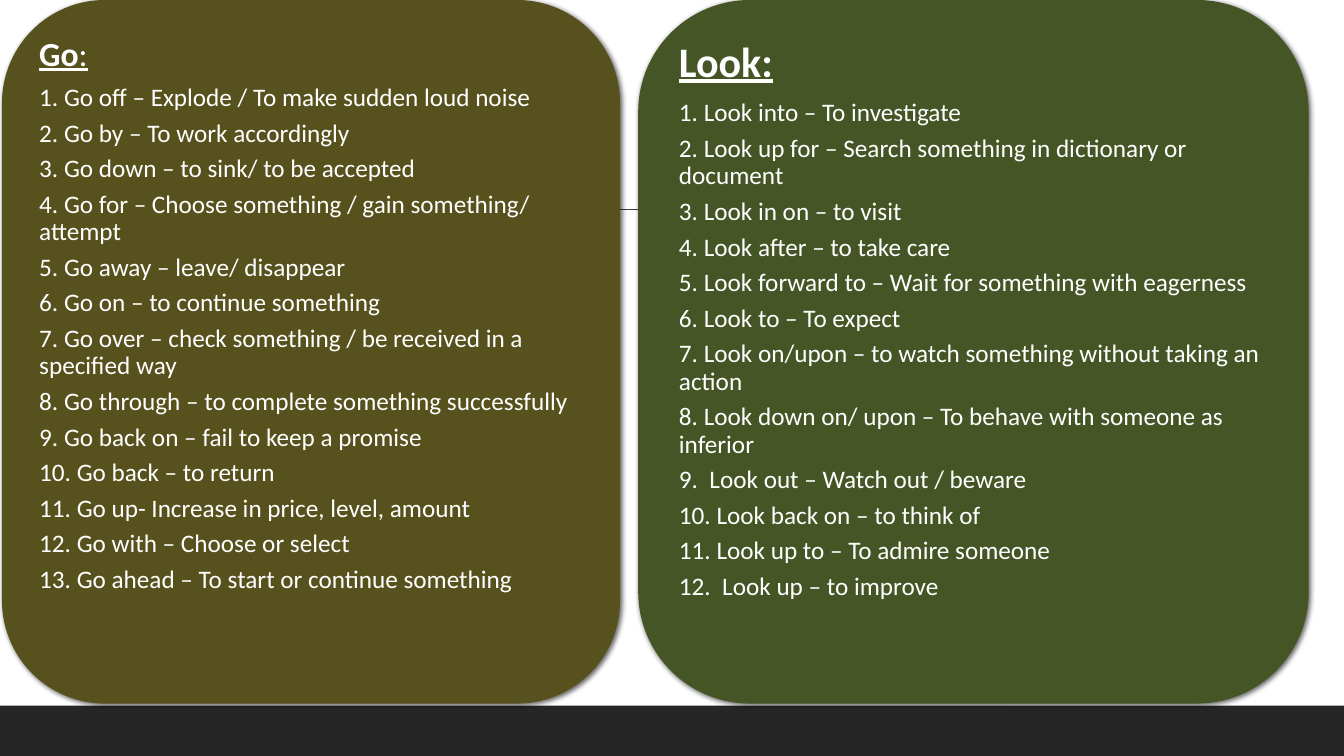
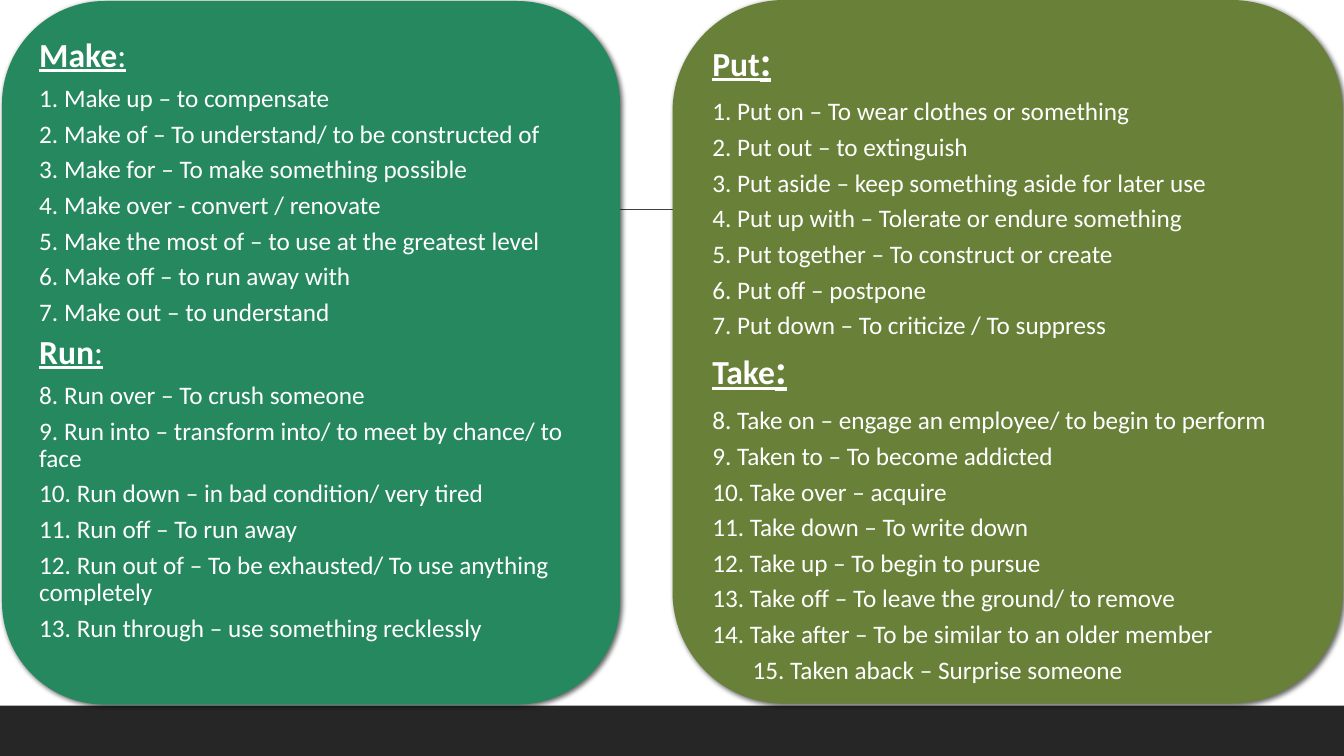
from lxml import etree
from pptx import Presentation
from pptx.dml.color import RGBColor
from pptx.enum.shapes import MSO_CONNECTOR, MSO_SHAPE
from pptx.enum.text import MSO_ANCHOR, PP_ALIGN
from pptx.oxml import parse_xml
from pptx.oxml.ns import nsdecls, qn
from pptx.util import Inches, Pt

FONT = "Calibri"
TEXT_COLOUR = "FFFFFF"
BAND_COLOUR = "262626"
RULE_COLOUR = "404040"
BODY_SIZE = 18
PANEL_HEIGHT = 6.98
LEFT_WIDTH, RIGHT_WIDTH = 6.13, 6.65
SHADOW = (
    f'<a:outerShdw {nsdecls("a")} blurRad="38100" dist="25400" dir="2700000" '
    'algn="tl" rotWithShape="0"><a:srgbClr val="000000">'
    '<a:alpha val="60000"/></a:srgbClr></a:outerShdw>'
)

SLIDES = [
    [
        dict(
            left=0.02, top=0, width=LEFT_WIDTH, colour="57521D", inset=0.07,
            heading_size=24, colon_size=24, colon_bold=False,
            lines=[
                "Go:",
                "1. Go off – Explode / To make sudden loud noise",
                "2. Go by – To work accordingly",
                "3. Go down – to sink/ to be accepted",
                "4. Go for – Choose something / gain something/ attempt",
                "5. Go away – leave/ disappear",
                "6. Go on – to continue something",
                "7. Go over – check something / be received in a specified way",
                "8. Go through – to complete something successfully",
                "9. Go back on – fail to keep a promise",
                "10. Go back – to return",
                "11. Go up- Increase in price, level, amount",
                "12. Go with – Choose or select",
                "13. Go ahead – To start or continue something",
            ],
        ),
        dict(
            left=6.33, top=0, width=RIGHT_WIDTH, colour="465525", inset=0.08,
            heading_size=30, colon_size=30, colon_bold=True,
            lines=[
                "Look:",
                "1. Look into – To investigate",
                "2. Look up for – Search something in dictionary or document",
                "3. Look in on – to visit",
                "4. Look after – to take care",
                "5. Look forward to – Wait for something with eagerness",
                "6. Look to – To expect",
                "7. Look on/upon – to watch something without taking an action",
                "8. Look down on/ upon – To behave with someone as inferior",
                "9.  Look out – Watch out / beware",
                "10. Look back on – to think of",
                "11. Look up to – To admire someone",
                "12.  Look up – to improve",
            ],
        ),
    ],
    [
        dict(
            left=0.02, top=0.01, width=LEFT_WIDTH, colour="26885E", inset=0.07,
            heading_size=24, colon_size=24, colon_bold=False,
            lines=[
                "Make:",
                "1. Make up – to compensate",
                "2. Make of – To understand/ to be constructed of",
                "3. Make for – To make something possible",
                "4. Make over - convert / renovate",
                "5. Make the most of – to use at the greatest level",
                "6. Make off – to run away with",
                "7. Make out – to understand",
                "Run:",
                "8. Run over – To crush someone",
                "9. Run into – transform into/ to meet by chance/ to face",
                "10. Run down – in bad condition/ very tired",
                "11. Run off – To run away",
                "12. Run out of – To be exhausted/ To use anything completely",
                "13. Run through – use something recklessly",
            ],
        ),
        dict(
            left=6.67, top=0, width=RIGHT_WIDTH, colour="698038", inset=0.07,
            heading_size=24, colon_size=30, colon_bold=True,
            lines=[
                "Put:",
                "1. Put on – To wear clothes or something",
                "2. Put out – to extinguish",
                "3. Put aside – keep something aside for later use",
                "4. Put up with – Tolerate or endure something",
                "5. Put together – To construct or create",
                "6. Put off – postpone",
                "7. Put down – To criticize / To suppress",
                "Take:",
                "8. Take on – engage an employee/ to begin to perform",
                "9. Taken to – To become addicted",
                "10. Take over – acquire",
                "11. Take down – To write down",
                "12. Take up – To begin to pursue",
                "13. Take off – To leave the ground/ to remove",
                "14. Take after – To be similar to an older member",
                "\t15. Taken aback – Surprise someone",
            ],
        ),
    ],
]


def rgb(colour):
    return RGBColor.from_string(colour)


def add_block(slide, kind, left, top, width, height, colour):
    shape = slide.shapes.add_shape(
        kind, Inches(left), Inches(top), Inches(width), Inches(height)
    )
    shape.shadow.inherit = False
    shape.fill.solid()
    shape.fill.fore_color.rgb = rgb(colour)
    shape.line.fill.background()
    return shape


presentation = Presentation()
presentation.slide_width = Inches(13.33)
presentation.slide_height = Inches(7.5)

for panels in SLIDES:
    slide = presentation.slides.add_slide(presentation.slide_layouts[6])
    add_block(slide, MSO_SHAPE.RECTANGLE, 0, 7, 13.33, 0.5, BAND_COLOUR)
    rule = slide.shapes.add_connector(
        MSO_CONNECTOR.STRAIGHT, Inches(1.31), Inches(2.08), Inches(12.21), Inches(2.08)
    )
    rule.line.color.rgb = rgb(RULE_COLOUR)
    rule.line.width = Pt(1)
    etree.SubElement(rule._element.spPr, qn("a:effectLst"))

    for panel in panels:
        shape = add_block(
            slide, MSO_SHAPE.FLOWCHART_ALTERNATE_PROCESS,
            panel["left"], panel["top"], panel["width"], PANEL_HEIGHT, panel["colour"],
        )
        shape._element.spPr.find(qn("a:effectLst")).append(parse_xml(SHADOW))
        frame = shape.text_frame
        frame.word_wrap = True
        frame.vertical_anchor = MSO_ANCHOR.TOP
        frame.margin_left = frame.margin_right = Inches(panel["inset"])
        frame.margin_top = frame.margin_bottom = Inches(panel["inset"])

        for index, line in enumerate(panel["lines"]):
            paragraph = frame.add_paragraph() if index else frame.paragraphs[0]
            paragraph.alignment = PP_ALIGN.LEFT
            paragraph.line_spacing = 0.9
            is_heading = line.endswith(":")
            size = panel["heading_size"] if is_heading else BODY_SIZE
            paragraph.font.name = FONT
            paragraph.font.color.rgb = rgb(TEXT_COLOUR)
            paragraph.font.size = Pt(size)
            if is_heading:
                paragraph.font.underline = True
                parts = [
                    (line[:-1], size, True),
                    (":", panel["colon_size"], panel["colon_bold"]),
                ]
                for text, part_size, bold in parts:
                    run = paragraph.add_run()
                    run.text = text
                    run.font.name = FONT
                    run.font.color.rgb = rgb(TEXT_COLOUR)
                    run.font.size = Pt(part_size)
                    run.font.bold = bold
                    run.font.underline = True
                size = panel["colon_size"]
            else:
                paragraph.text = line.lstrip("\t")
                if line.startswith("\t"):
                    paragraph._p.get_or_add_pPr().set("marL", str(Inches(0.4)))
            paragraph.space_after = Pt(size / 3)

presentation.save("out.pptx")
